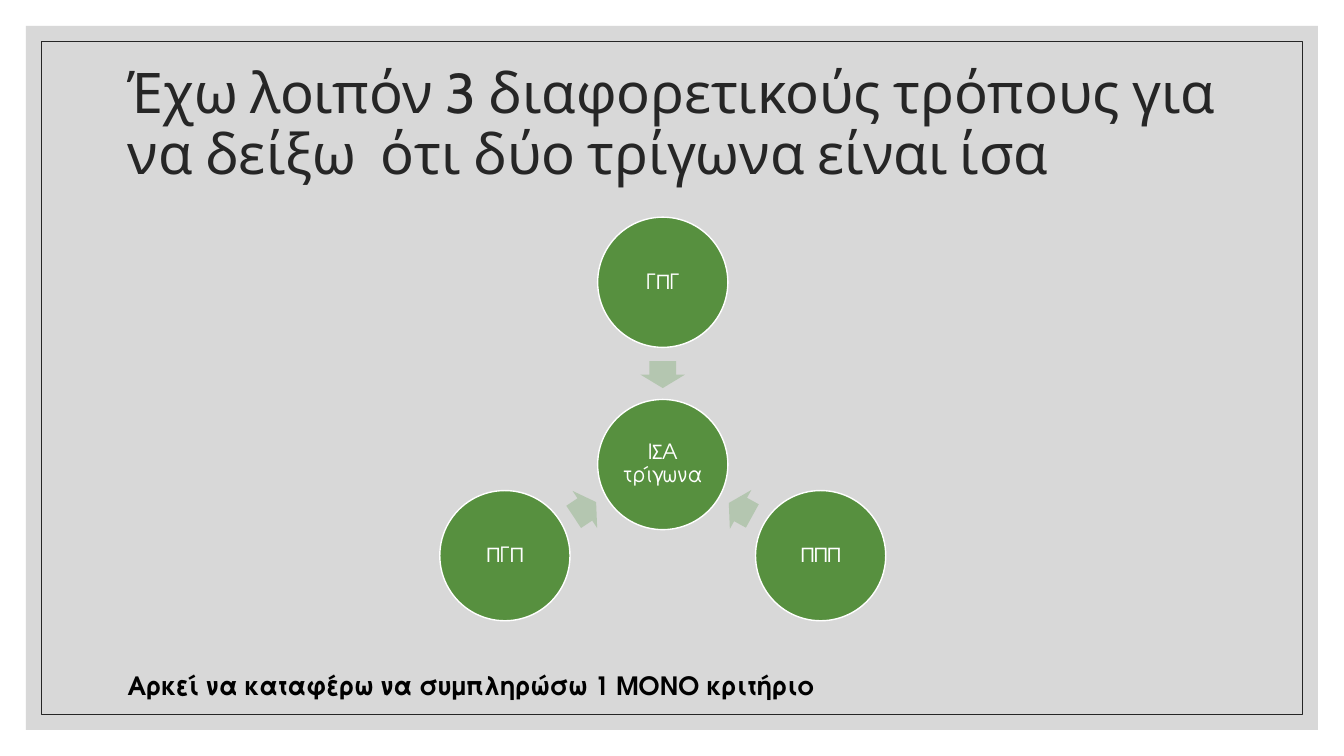
from math import cos, radians, sin

from lxml.etree import SubElement
from pptx import Presentation
from pptx.dml.color import RGBColor
from pptx.enum.shapes import MSO_SHAPE
from pptx.enum.text import MSO_ANCHOR, MSO_AUTO_SIZE, PP_ALIGN
from pptx.oxml.ns import qn
from pptx.util import Inches, Pt

# The page is a grid of 16 columns by 9 rows of square cells
COLUMNS, ROWS = 16, 9
CELL = Inches(7.5) / ROWS

COLOURS = {
    "panel": "BFBFBF",
    "ink": "262626",
    "black": "000000",
    "white": "FFFFFF",
    "circle": "57903F",
    "arrow": "B4C6B0",
}
TITLE_FONT, BODY_FONT = "Cabin", "TeX Gyre Adventor"

# Radial diagram, in cells
CENTRE = (7.89, 5.53)
CIRCLE_SIZE = 1.55
CIRCLE_DISTANCE = 2.17
ARROW_SIZE = (0.32, 0.53)
ARROW_DISTANCE = 1.07
# Criterion, direction from the centre, rotation of its arrow
CRITERIA = [("ΓΠΓ", -90, 90), ("ΠΠΠ", 30, 208.9), ("ΠΓΠ", 150, 326.5)]


def colour(name):
    return RGBColor.from_string(COLOURS[name])


def cells(*lengths):
    return [round(length * CELL) for length in lengths]


def around_centre(angle, distance):
    turn = radians(angle)
    return CENTRE[0] + distance * cos(turn), CENTRE[1] + distance * sin(turn)


def write(box, text, size, font=BODY_FONT, ink="black", bold=False,
          align=PP_ALIGN.LEFT, anchor=MSO_ANCHOR.TOP, spacing=1.0, inset=None):
    frame = box.text_frame
    frame.word_wrap = True
    frame.auto_size = MSO_AUTO_SIZE.NONE
    frame.vertical_anchor = anchor
    if inset is not None:
        frame.margin_left = frame.margin_right = Inches(inset)
        frame.margin_top = frame.margin_bottom = Inches(inset)
    para = frame.paragraphs[0]
    para.alignment = align
    para.line_spacing = spacing
    span = para.add_run()
    span.text = text
    span.font.size = Pt(size)
    span.font.name = font
    span.font.bold = bold
    span.font.color.rgb = colour(ink)


def add_form(parent, kind, place, fill=None, line=None, width=1, opacity=100):
    form = parent.shapes.add_shape(kind, *cells(*place))
    form.shadow.inherit = False
    if fill:
        form.fill.solid()
        form.fill.fore_color.rgb = colour(fill)
        if opacity < 100:
            tint = form.fill._xPr.find(qn("a:solidFill"))[0]
            SubElement(tint, qn("a:alpha"), val=str(opacity * 1000))
    else:
        form.fill.background()
    if line:
        form.line.color.rgb = colour(line)
        form.line.width = Pt(width)
    else:
        form.line.fill.background()
    return form


def add_circle(group, centre, label):
    left, top = (middle - CIRCLE_SIZE / 2 for middle in centre)
    circle = add_form(group, MSO_SHAPE.OVAL, (left, top, CIRCLE_SIZE, CIRCLE_SIZE),
                      fill="circle", line="white")
    write(circle, label, 15, ink="white", align=PP_ALIGN.CENTER,
          anchor=MSO_ANCHOR.MIDDLE, spacing=0.9, inset=0.02)


def add_arrow(group, centre, rotation):
    left, top = (middle - size / 2 for middle, size in zip(centre, ARROW_SIZE))
    arrow = add_form(group, MSO_SHAPE.RIGHT_ARROW, (left, top, *ARROW_SIZE), fill="arrow")
    arrow.adjustments[0], arrow.adjustments[1] = 0.6, 0.5
    arrow.rotation = rotation


def add_background(page):
    for margin, style in ((0.31, {"fill": "panel", "opacity": 60}),
                          (0.49, {"line": "ink", "width": 0.5})):
        place = (margin, margin, COLUMNS - 2 * margin, ROWS - 2 * margin)
        add_form(page, MSO_SHAPE.RECTANGLE, place, **style)


def add_title(page, text):
    title = page.shapes.title
    title.left, title.top, title.width, title.height = cells(1.4, 0.6, 13.2, 1.8)
    write(title, text, 40, font=TITLE_FONT, ink="ink",
          anchor=MSO_ANCHOR.MIDDLE, spacing=0.9)
    # Bring the title in front of the background
    page.shapes.element.append(title.element)


def add_diagram(page):
    group = page.shapes.add_group_shape()
    add_circle(group, CENTRE, "ΙΣΑ τρίγωνα")
    for label, angle, rotation in CRITERIA:
        add_arrow(group, around_centre(angle, ARROW_DISTANCE), rotation)
        add_circle(group, around_centre(angle, CIRCLE_DISTANCE), label)


def main():
    deck = Presentation()
    deck.slide_width, deck.slide_height = cells(COLUMNS, ROWS)
    page = deck.slides.add_slide(deck.slide_layouts[5])

    add_background(page)
    add_title(page, "Έχω λοιπόν 3 διαφορετικούς τρόπους για να δείξω  ότι δύο τρίγωνα είναι ίσα")

    # Closing remark
    note = page.shapes.add_textbox(*cells(1.4, 7.92, 11.2, 0.48))
    write(note, "Αρκεί να καταφέρω να συμπληρώσω 1 ΜΟΝΟ κριτήριο", 18, bold=True)

    add_diagram(page)
    deck.save("out.pptx")


if __name__ == "__main__":
    main()
